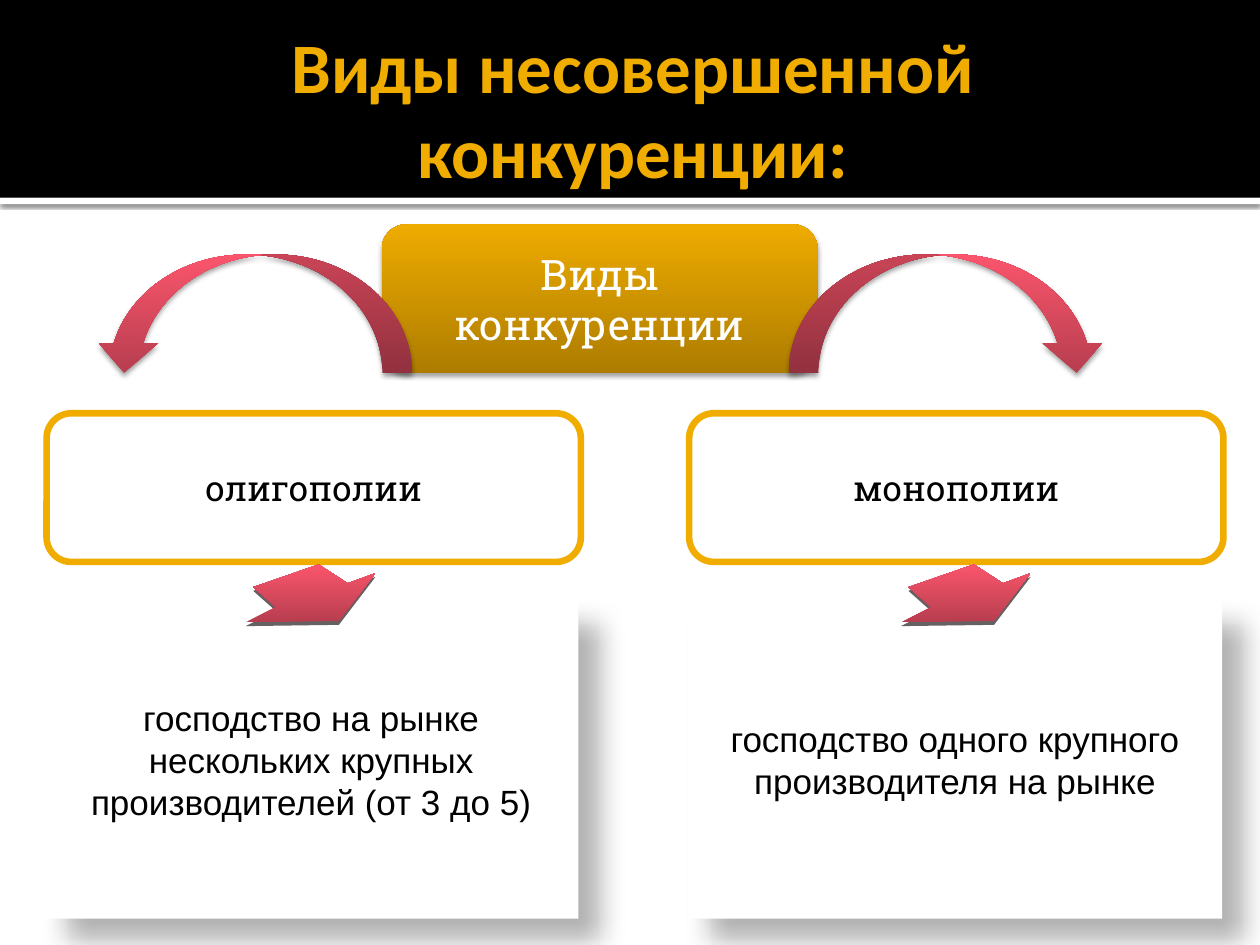
from pptx import Presentation
from pptx.dml.color import RGBColor
from pptx.enum.shapes import MSO_SHAPE as Kind
from pptx.enum.text import MSO_ANCHOR as Anchor, PP_ALIGN as Align
from pptx.oxml.ns import qn
from pptx.util import Inches, Pt
from lxml.etree import SubElement as Sub

WHITE = RGBColor(0xFF, 0xFF, 0xFF)
BLACK = RGBColor(0, 0, 0)
GOLD = RGBColor(0xF0, 0xAD, 0x00)
GRAY = RGBColor(0x66, 0x60, 0x62)
AMBER = (RGBColor(0xAE, 0x7D, 0x00), RGBColor(0xEE, 0xAB, 0x00))
ROSE = (RGBColor(0xB7, 0x3E, 0x4F), RGBColor(0xFA, 0x55, 0x6C))

TITLE = "Виды несовершенной конкуренции:"
ROOT = "Виды конкуренции"
KINDS = [
    {"name": "олигополии", "note": "господство на рынке нескольких крупных производителей (от 3 до 5)",
     "box": 0.37, "card": 0.35, "bend": 0.75, "drop": 1.95, "flip": True},
    {"name": "монополии", "note": "господство одного крупного производителя на рынке",
     "box": 5.47, "card": 5.46, "bend": 6.26, "drop": 7.15, "flip": False},
]
DROP = [(0.06, 0.18), (0.58, 0), (0.81, 0.15), (1.03, 0.07),
        (0.74, 0.45), (0, 0.46), (0.24, 0.34)]
DROP_TOP = 4.48
DEPTH = 0.03
WIDE = 4.24
SOFT = (38, 3.1, 2, 90)
FAR = (30, 15, 18, 45)
THIN = (60, 2.5, 0.8, 90)

deck = Presentation()
deck.slide_width, deck.slide_height = Inches(10), Inches(7.5)
slide = deck.slides.add_slide(deck.slide_layouts[6])
shapes = slide.shapes


def paint(shape, fill, line=None, shade=None):
    if isinstance(fill, RGBColor):
        shape.fill.solid()
        shape.fill.fore_color.rgb = fill
    else:
        shape.fill.gradient()
        shape.fill.gradient_angle = 90
        for stop, color in zip(shape.fill.gradient_stops, fill):
            stop.color.rgb = color
    if line:
        shape.line.color.rgb = line
        shape.line.width = Pt(3.78)
    else:
        shape.line.fill.background()
    shape.shadow.inherit = False
    if shade:
        alpha, blur, dist, angle = shade
        effects = shape._element.spPr.find(qn("a:effectLst"))
        outer = Sub(effects, qn("a:outerShdw"), blurRad=str(Pt(blur)), dist=str(Pt(dist)),
                    dir=str(angle * 60000), algn="tl", rotWithShape="0")
        color = Sub(outer, qn("a:srgbClr"), val="000000")
        Sub(color, qn("a:alpha"), val=str(alpha * 1000))
    return shape


def block(kind, box, fill, **style):
    return paint(shapes.add_shape(kind, *map(Inches, box)), fill, **style)


def write(shape, text, size=20, font="Arial", color=BLACK, bold=False):
    frame = shape.text_frame
    frame.word_wrap = True
    frame.vertical_anchor = Anchor.MIDDLE
    para = frame.paragraphs[0]
    para.alignment = Align.CENTER
    run = para.add_run()
    run.text = text
    run.font.size = Pt(size)
    run.font.name = font
    run.font.bold = bold
    run.font.color.rgb = color


def drop(left, top, fill):
    points = [(Inches(left + x), Inches(top + y)) for x, y in DROP]
    pen = shapes.build_freeform(*points[0])
    pen.add_line_segments(points[1:], close=True)
    paint(pen.convert_to_shape(), fill)


block(Kind.RECTANGLE, (0, 1.57, 10, 0.05), WHITE, shade=THIN)
block(Kind.RECTANGLE, (0, 0, 10, 1.57), BLACK)
head = shapes.add_textbox(*map(Inches, (0.5, 0.17, 9, 1.37)))
head.text_frame.margin_right = Inches(0.05)
write(head, TITLE, size=40.5, font="Calibri", color=GOLD, bold=True)

root = block(Kind.ROUNDED_RECTANGLE, (3.03, 1.78, 3.46, 1.18), AMBER, shade=SOFT)
write(root, ROOT, size=24, font="Roboto Slab", color=WHITE)

for kind in KINDS:
    box = block(Kind.ROUNDED_RECTANGLE, (kind["box"], 3.28, WIDE, 1.18), WHITE, line=GOLD)
    write(box, kind["name"], font="Roboto Slab")
    bend = block(Kind.CURVED_DOWN_ARROW, (kind["bend"], 2.02, 2.52, 0.94), ROSE, shade=SOFT)
    if kind["flip"]:
        bend._element.spPr.find(qn("a:xfrm")).set("flipH", "1")
    card = block(Kind.RECTANGLE, (kind["card"], 4.77, WIDE, 2.52), WHITE, shade=FAR)
    write(card, kind["note"])
    drop(kind["drop"], DROP_TOP + DEPTH, GRAY)
    drop(kind["drop"], DROP_TOP, ROSE)

deck.save("out.pptx")
